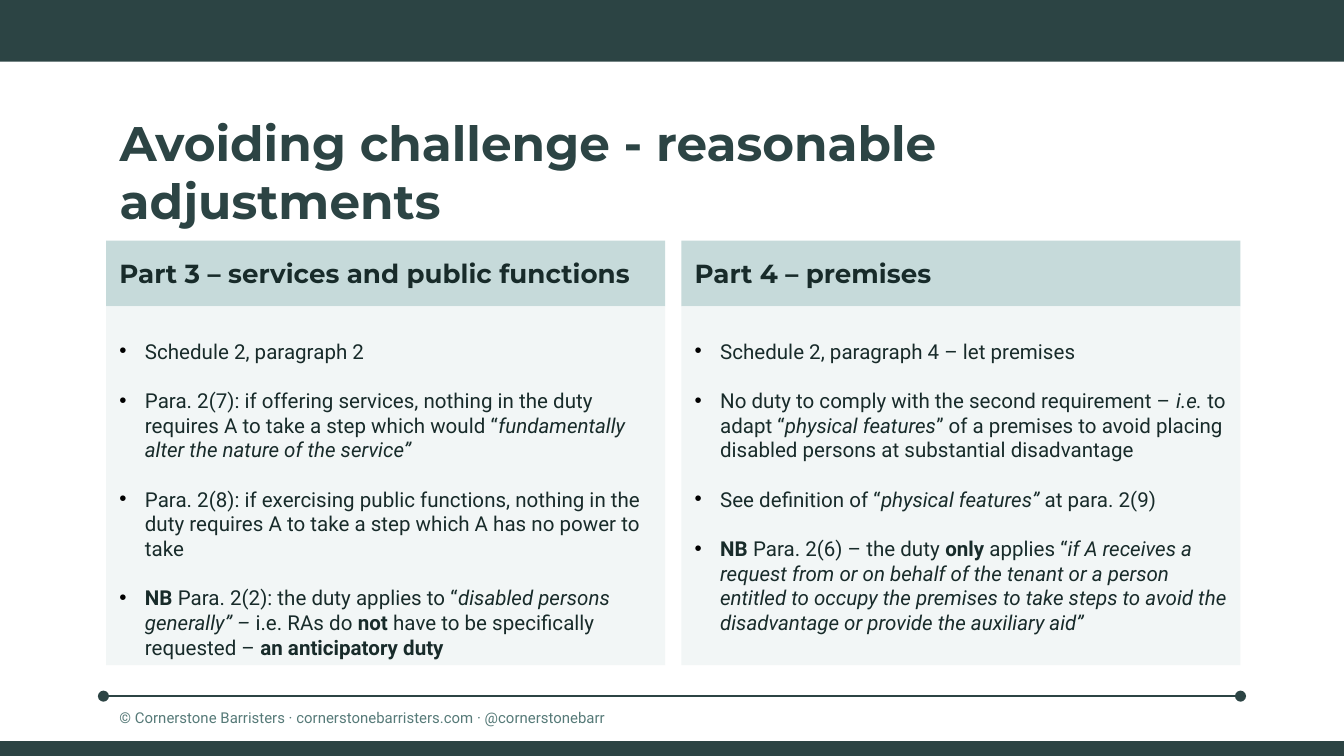
import pptx
import pptx.util
import pptx.dml.color
import pptx.enum.shapes
import pptx.enum.text
import pptx.oxml
import pptx.oxml.ns

Inches, Pt = pptx.util.Inches, pptx.util.Pt
ANCHOR, ALIGN = pptx.enum.text.MSO_ANCHOR, pptx.enum.text.PP_ALIGN
RECT = pptx.enum.shapes.MSO_SHAPE.RECTANGLE
DARK, INK, MUTED = "2C4444", "182B2A", "567A78"
HEAD, PANEL = "C6DADA", "F2F6F6"

W = 10
H = W * 9 / 16
LEFT, COL, GAP = 0.79, 4.16, 0.12
TOP, HEAD_H, BODY_H = 1.79, 0.49, 2.67
INDENT = 0.19

columns = [
    ("Part 3 – services and public functions", [
        [("Schedule 2, paragraph 2", "")],
        [("Para. 2(7): if offering services, nothing in the duty requires A to take a step which would “", ""),
         ("fundamentally alter the nature of the service”", "i")],
        [("Para. 2(8): if exercising public functions, nothing in the duty requires A to take "
          "a step which A has no power to take", "")],
        [("NB ", "b"), ("Para. 2(2): the duty applies to “", ""),
         ("disabled persons generally” – ", "i"), ("i.e. RAs do ", ""), ("not ", "b"),
         ("have to be specifically requested – ", ""), ("an anticipatory duty", "b")],
    ]),
    ("Part 4 – premises", [
        [("Schedule 2, paragraph 4 – let premises", "")],
        [("No duty to comply with the second requirement – ", ""), ("i.e. ", "i"),
         ("to adapt “", ""), ("physical features", "i"),
         ("” of a premises to avoid placing disabled persons at substantial disadvantage", "")],
        [("See definition of “", ""), ("physical features” ", "i"), ("at para. 2(9)", "")],
        [("NB ", "b"), ("Para. 2(6) – the duty ", ""), ("only", "b"), (" applies “", ""),
         ("if A receives a request from or on behalf of the tenant or a person entitled to occupy "
          "the premises to take steps to avoid the disadvantage or provide the auxiliary aid”", "i")],
    ]),
]

prs = pptx.Presentation()
prs.slide_width, prs.slide_height = Inches(W), Inches(H)
s = prs.slides.add_slide(prs.slide_layouts[5])


def add_rect(x, y, w, h, color):
    sp = s.shapes.add_shape(RECT, Inches(x), Inches(y), Inches(w), Inches(h))
    sp.shadow.inherit = False
    sp.fill.solid()
    sp.fill.fore_color.rgb = pptx.dml.color.RGBColor.from_string(color)
    sp.line.fill.background()
    sp.text_frame.word_wrap = True
    return sp


def add_run(p, text, font, size, color, style=""):
    p.alignment = ALIGN.LEFT
    r = p.add_run()
    r.text = text
    r.font.name, r.font.size = font, Pt(size)
    r.font.bold, r.font.italic = "b" in style, "i" in style
    r.font.color.rgb = pptx.dml.color.RGBColor.from_string(color)


add_rect(0, 0, W, 0.46, DARK)
add_rect(0, H - 0.11, W, 0.11, DARK)

rule = s.shapes.add_connector(pptx.enum.shapes.MSO_CONNECTOR.STRAIGHT,
                              Inches(0.77), Inches(5.18), Inches(W - 0.77), Inches(5.18))
rule.line.color.rgb = pptx.dml.color.RGBColor.from_string(DARK)
rule.line.width = Pt(0.75)
ln = rule.line._get_or_add_ln()
for end in ("headEnd", "tailEnd"):
    ln.append(pptx.oxml.parse_xml(f'<a:{end} {pptx.oxml.ns.nsdecls("a")} type="oval"/>'))
rule._element.spPr.append(pptx.oxml.parse_xml(f'<a:effectLst {pptx.oxml.ns.nsdecls("a")}/>'))

title = s.shapes.title
title.left, title.top = Inches(LEFT), Inches(0.79)
title.width, title.height = Inches(2 * COL + GAP), Inches(0.58)
tf = title.text_frame
tf.word_wrap = True
tf.auto_size = pptx.enum.text.MSO_AUTO_SIZE.NONE
tf.vertical_anchor = ANCHOR.TOP
add_run(tf.paragraphs[0], "Avoiding challenge - reasonable adjustments", "Montserrat", 26, DARK, "b")

for i, (heading, bullets) in enumerate(columns):
    x = LEFT + i * (COL + GAP)
    tf = add_rect(x, TOP, COL, HEAD_H, HEAD).text_frame
    tf.vertical_anchor = ANCHOR.MIDDLE
    add_run(tf.paragraphs[0], heading, "Montserrat", 14, INK, "b")

    tf = add_rect(x, TOP + HEAD_H, COL, BODY_H, PANEL).text_frame
    tf.vertical_anchor = ANCHOR.TOP
    tf.margin_top = Inches(0.24)
    for n, runs in enumerate(bullets):
        p = tf.add_paragraph() if n else tf.paragraphs[0]
        pPr = p._p.get_or_add_pPr()
        pPr.set("marL", str(Inches(INDENT)))
        pPr.set("indent", str(-Inches(INDENT)))
        for xml in ('<a:buClr {}><a:srgbClr val="000000"/></a:buClr>',
                    '<a:buFont {} typeface="Arial"/>', '<a:buChar {} char="•"/>'):
            pPr.append(pptx.oxml.parse_xml(xml.format(pptx.oxml.ns.nsdecls("a"))))
        if n:
            p.space_before = Pt(13.2)
        for text, style in runs:
            add_run(p, text, "Roboto", 11, INK, style)

footer = s.shapes.add_textbox(Inches(LEFT), Inches(5.14), Inches(4.95), Inches(0.31))
tf = footer.text_frame
tf.word_wrap = True
tf.vertical_anchor = ANCHOR.TOP
tf.margin_top, tf.margin_bottom = Inches(0.13), Inches(0.05)
add_run(tf.paragraphs[0], "© Cornerstone Barristers · cornerstonebarristers.com · @cornerstonebarr",
        "Roboto", 8, MUTED)

prs.save("out.pptx")
